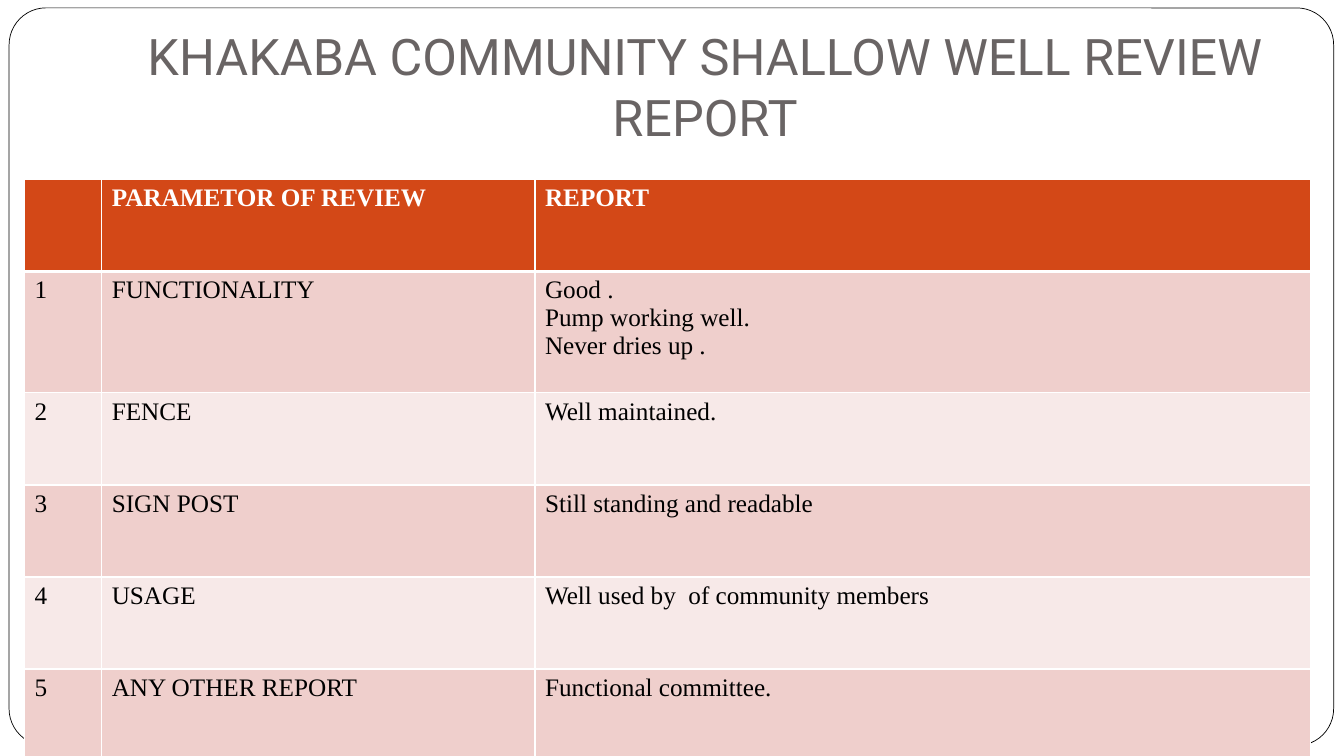
from dataclasses import dataclass

from lxml import etree
from pptx import Presentation
from pptx.dml.color import RGBColor
from pptx.enum import shapes, text
from pptx.oxml import ns
from pptx.util import Cm, Pt


@dataclass(frozen=True)
class Theme:
    title_font: str = "Roboto"
    table_font: str = "Times New Roman"
    title_size: float = 36
    table_size: float = 18
    frame_line: float = 0.5
    grid_line: float = 1
    header_line: float = 3
    white: str = "FFFFFF"
    black: str = "000000"
    title: str = "696464"
    header: str = "D34817"
    odd_row: str = "EFCFCC"
    even_row: str = "F7E9E8"


@dataclass(frozen=True)
class Box:
    left: float
    top: float
    width: float
    height: float

    def lengths(self):
        return Cm(self.left), Cm(self.top), Cm(self.width), Cm(self.height)


THEME = Theme()
TITLE = "KHAKABA COMMUNITY SHALLOW WELL REVIEW REPORT"
HEADINGS = ("", "PARAMETOR OF REVIEW", "REPORT")
REVIEWS = (
    ("FUNCTIONALITY", "Good .\nPump working well.\nNever dries up ."),
    ("FENCE", "Well maintained."),
    ("SIGN POST", "Still standing and readable"),
    ("USAGE", "Well used by  of community members"),
    ("ANY OTHER REPORT", "Functional committee."),
)
COLUMN_SHARES = (0.06, 0.337, 0.603)
ROW_HEIGHT = 2.32
TALL_ROW_HEIGHT = 3.06


def add_span(para, words, font, size, color, bold=False):
    span = para.add_run()
    span.text = words
    span.font.name = font
    span.font.size = Pt(size)
    span.font.bold = bold
    span.font.color.rgb = RGBColor.from_string(color)


def add_frame(page, box):
    frame = page.shapes.add_shape(shapes.MSO_SHAPE.ROUNDED_RECTANGLE, *box.lengths())
    frame.adjustments[0] = 0.05
    frame.shadow.inherit = False
    frame.fill.solid()
    frame.fill.fore_color.rgb = RGBColor.from_string(THEME.white)
    frame.line.color.rgb = RGBColor.from_string(THEME.black)
    frame.line.width = Pt(THEME.frame_line)


def add_title(page, box):
    body = page.shapes.add_textbox(*box.lengths()).text_frame
    body.word_wrap = True
    body.vertical_anchor = text.MSO_ANCHOR.BOTTOM
    body.margin_bottom = Cm(0.25)
    para = body.paragraphs[0]
    para.alignment = text.PP_ALIGN.CENTER
    add_span(para, TITLE, THEME.title_font, THEME.title_size, THEME.title)


def set_border(cell, side, width):
    properties = cell._tc.get_or_add_tcPr()
    line = etree.SubElement(properties, ns.qn(f"a:ln{side}"), w=str(Pt(width)))
    fill = etree.SubElement(line, ns.qn("a:solidFill"))
    etree.SubElement(fill, ns.qn("a:srgbClr"), val=THEME.white)


def fill_cell(cell, words, row):
    is_header = row == 0
    edges = {side: THEME.grid_line for side in "LRTB"}
    if row < 2:
        edges["B" if is_header else "T"] = THEME.header_line
    for side, width in edges.items():
        set_border(cell, side, width)
    band = THEME.odd_row if row % 2 else THEME.even_row
    cell.fill.solid()
    cell.fill.fore_color.rgb = RGBColor.from_string(THEME.header if is_header else band)
    color = THEME.white if is_header else THEME.black
    for index, sentence in enumerate(words.split("\n")):
        para = cell.text_frame.add_paragraph() if index else cell.text_frame.paragraphs[0]
        if sentence:
            add_span(para, sentence, THEME.table_font, THEME.table_size, color, is_header)


def add_reviews(page, box):
    rows = [HEADINGS]
    rows += [(str(number), *review) for number, review in enumerate(REVIEWS, 1)]
    table = page.shapes.add_table(len(rows), len(HEADINGS), *box.lengths()).table
    for column, share in zip(table.columns, COLUMN_SHARES):
        column.width = Cm(box.width * share)
    for row, values in enumerate(rows):
        is_tall = "\n" in values[-1]
        table.rows[row].height = Cm(TALL_ROW_HEIGHT if is_tall else ROW_HEIGHT)
        for column, words in enumerate(values):
            fill_cell(table.cell(row, column), words, row)


def main():
    deck = Presentation()
    deck.slide_width, deck.slide_height = Cm(33.87), Cm(19.05)
    page = deck.slides.add_slide(deck.slide_layouts[6])
    add_frame(page, Box(0.23, 0.2, 33.38, 18.59))
    add_title(page, Box(3.38, 0.76, 28.78, 3.18))
    add_reviews(page, Box(0.62, 4.52, 32.4, 14.66))
    deck.save("out.pptx")


if __name__ == "__main__":
    main()
